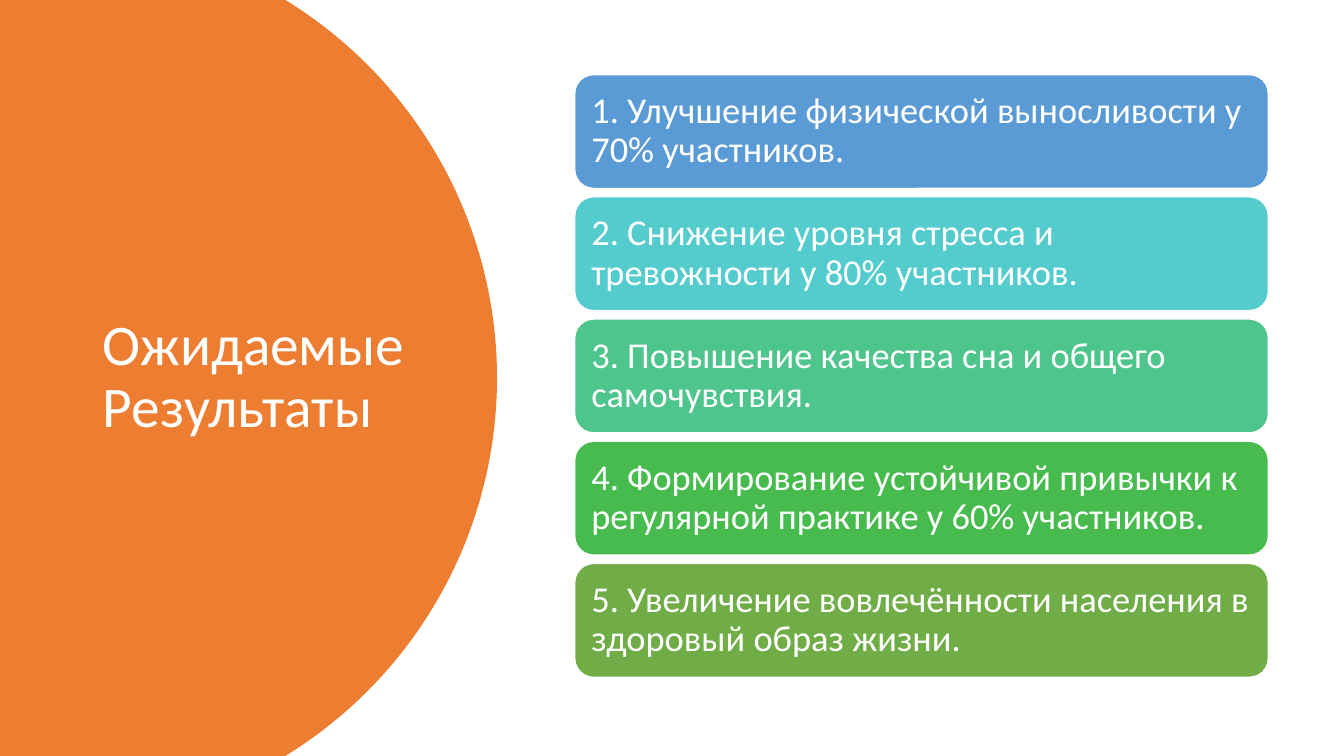
from math import asin, cos, sin

from pptx import Presentation
from pptx.dml.color import RGBColor
from pptx.enum.shapes import MSO_SHAPE
from pptx.enum.text import MSO_ANCHOR, PP_ALIGN
from pptx.util import Pt

ROUNDED = MSO_SHAPE.ROUNDED_RECTANGLE
MIDDLE = MSO_ANCHOR.MIDDLE
LEFT = PP_ALIGN.LEFT

EMU_PER_PX = 9144  # 100 px to the inch
SLIDE_WIDTH, SLIDE_HEIGHT = 1333, 750
WHITE = "FFFFFF"
ARC_STEPS = 120

TITLE = "Ожидаемые Результаты"
RESULTS = [
    ("1. Улучшение физической выносливости у 70% участников.", "5B9BD5"),
    ("2. Снижение уровня стресса и тревожности у 80% участников.", "54CCCD"),
    ("3. Повышение качества сна и общего самочувствия.", "4DC58D"),
    ("4. Формирование устойчивой привычки к регулярной практике у 60% участников.", "48BB4F"),
    ("5. Увеличение вовлечённости населения в здоровый образ жизни.", "70AD47"),
]


def px(length):
    return round(length * EMU_PER_PX)


def color(hex_string):
    return RGBColor.from_string(hex_string)


def set_all(target, values):
    for name, value in values.items():
        setattr(target, name, value)


def write_text(shape, text, size, inset_x, inset_y):
    frame = shape.text_frame
    set_all(frame, {
        "word_wrap": True, "vertical_anchor": MIDDLE,
        "margin_left": px(inset_x), "margin_right": px(inset_x),
        "margin_top": px(inset_y), "margin_bottom": px(inset_y),
    })
    para = frame.paragraphs[0]
    set_all(para, {"alignment": LEFT, "line_spacing": 0.9})
    span = para.add_run()
    span.text = text
    set_all(span.font, {"name": "Calibri", "size": Pt(size)})
    span.font.color.rgb = color(WHITE)


def fill_shape(shape, hex_string):
    shape.shadow.inherit = False
    shape.fill.solid()
    shape.fill.fore_color.rgb = color(hex_string)


def add_title_panel(page, left, top, width, height):
    """Draw the panel whose right side is a circular arc, with the title on it."""
    shoulder = 283
    bulge = width - shoulder
    half = height / 2
    radius = (bulge ** 2 + half ** 2) / (2 * bulge)
    center_x, center_y = left + width - radius, top + half
    sweep = asin(half / radius)
    angles = [sweep * (2 * step / ARC_STEPS - 1) for step in range(ARC_STEPS + 1)]
    arc = [(px(center_x + radius * cos(angle)), px(center_y + radius * sin(angle)))
           for angle in angles]
    outline = page.shapes.build_freeform(px(left), px(top))
    outline.add_line_segments(arc + [(px(left), px(top + height))], close=True)
    panel = outline.convert_to_shape()
    fill_shape(panel, "ED7D31")
    panel.line.fill.background()

    title = page.shapes.add_textbox(px(left + 92), px(top + 70), px(323), px(609))
    write_text(title, TITLE, 41, 10, 5)


def add_result_cards(page, left, top, width, height):
    """Stack the cards at equal steps so that they fill the box."""
    card_height = 113
    step = (height - card_height) / (len(RESULTS) - 1)
    for index, (text, hex_string) in enumerate(RESULTS):
        card = page.shapes.add_shape(
            ROUNDED, px(left), px(top + index * step), px(width), px(card_height))
        fill_shape(card, hex_string)
        card.line.color.rgb = color(WHITE)
        card.line.width = Pt(1)
        write_text(card, text, 26, 11, 11)


def main():
    deck = Presentation()
    set_all(deck, {"slide_width": px(SLIDE_WIDTH), "slide_height": px(SLIDE_HEIGHT)})
    page = deck.slides.add_slide(deck.slide_layouts[6])
    add_title_panel(page, 0, 0, 493, SLIDE_HEIGHT)
    add_result_cards(page, 570, 74, 688, 598)
    deck.save("out.pptx")


if __name__ == "__main__":
    main()
